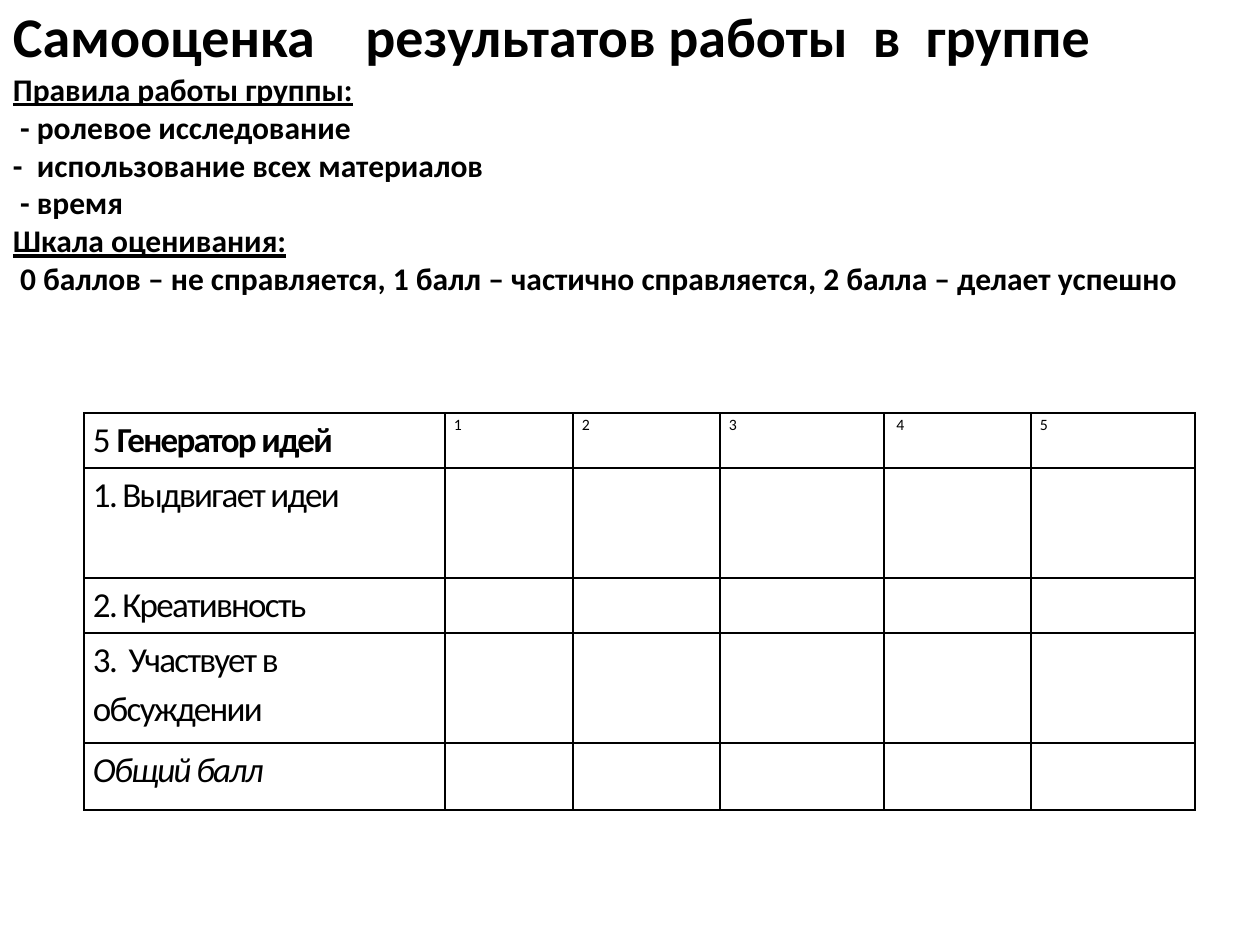
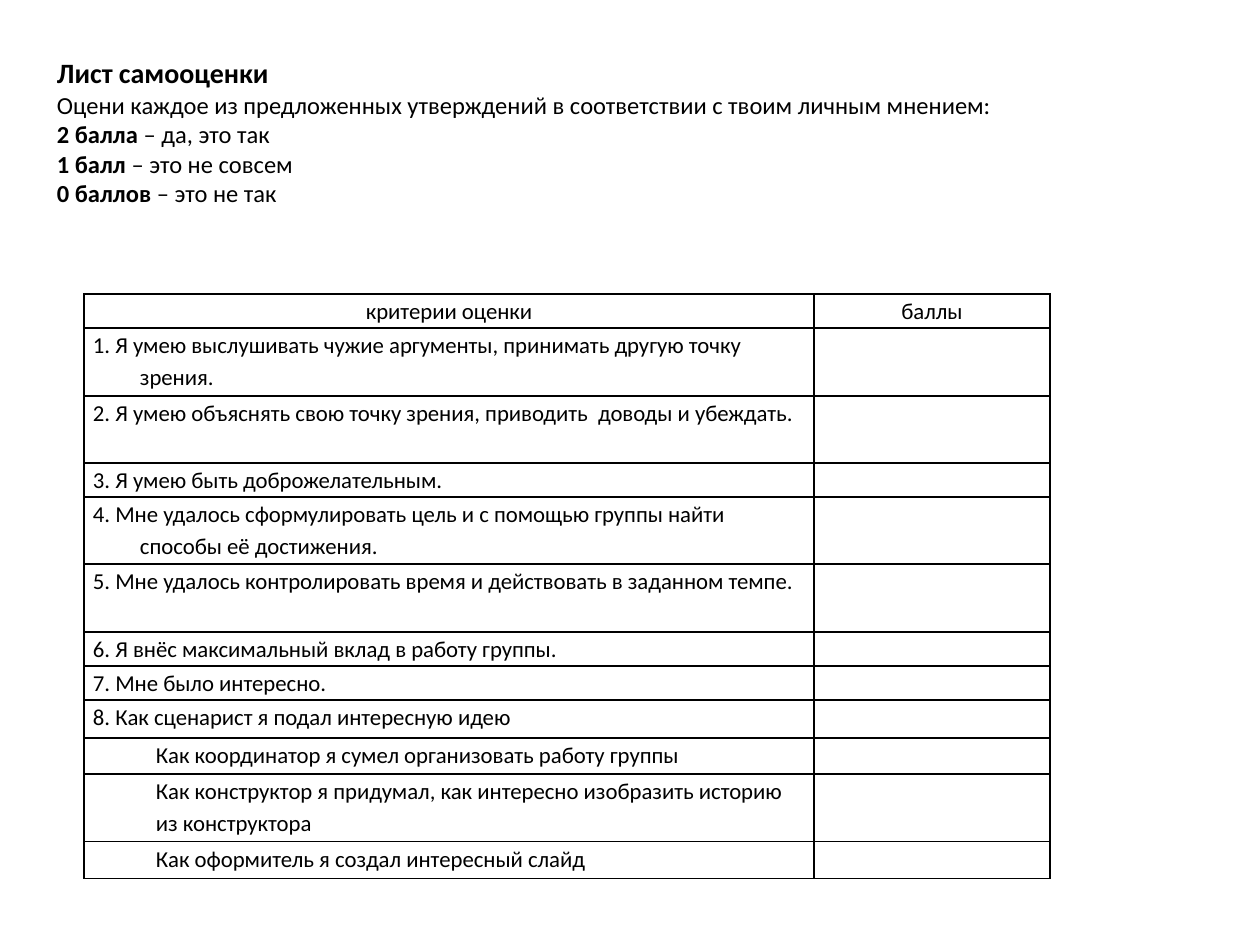
from dataclasses import dataclass

from lxml import etree
from pptx import Presentation
from pptx import util as u
from pptx.dml.color import RGBColor
from pptx.enum import text
from pptx.oxml.ns import qn

PX = 914400 // 126  # EMU in one px


@dataclass(frozen=True)
class Theme:
    font: str = "Calibri"
    ink: RGBColor = RGBColor(0, 0, 0)
    border: str = "000000"
    border_width: int = 12700
    line_spacing: float = 1.15
    heading: int = 32
    rules: int = 18
    sheet_heading: int = 16
    sheet_text: int = 14
    roles: int = 20
    numbers: int = 9
    criteria: int = 13


theme = Theme()


def write(paragraph, parts, size):
    """Fill a paragraph with (wording, style) parts; style holds b, i or u."""
    paragraph.font.name = theme.font
    paragraph.font.size = u.Pt(size)
    paragraph.font.color.rgb = theme.ink
    for wording, style in parts:
        run = paragraph.add_run()
        run.text = wording
        font = paragraph.font if len(parts) == 1 else run.font
        font.bold = "b" in style
        font.italic = "i" in style
        font.underline = "u" in style


def add_grid(slide, left, top, columns, rows, empty_size):
    """Add a plain ruled table with the given column widths and row heights."""
    frame = slide.shapes.add_table(len(rows), len(columns), left * PX, top * PX,
                                   sum(columns) * PX, sum(rows) * PX)
    table = frame.table
    table.first_row = table.horz_banding = False
    for column, width in zip(table.columns, columns):
        column.width = width * PX
    for row, height in zip(table.rows, rows):
        row.height = height * PX
    for cell in table.iter_cells():
        cell.margin_left = cell.margin_right = 9 * PX
        cell.margin_top = cell.margin_bottom = 0
        properties = cell._tc.get_or_add_tcPr()
        for side in ("a:lnL", "a:lnR", "a:lnT", "a:lnB"):
            line = etree.SubElement(properties, qn(side), w=str(theme.border_width))
            fill = etree.SubElement(line, qn("a:solidFill"))
            etree.SubElement(fill, qn("a:srgbClr"), val=theme.border)
        cell.fill.background()
        paragraph = cell.text_frame.paragraphs[0]
        paragraph.line_spacing = theme.line_spacing
        etree.SubElement(paragraph._p, qn("a:endParaRPr"), sz=str(empty_size * 100))
    return table


presentation = Presentation()
presentation.slide_width = 1260 * PX
presentation.slide_height = 945 * PX

# Headings and the lists under them
pages = [
    {
        "box": (0, 2, 1260), "title_height": 68, "body_height": 231,
        "title": "Самооценка    результатов работы  в  группе",
        "title_size": theme.heading, "body_size": theme.rules,
        "body": [
            [("Правила работы группы:", "bu")],
            [(" - ролевое исследование", "b")],
            [("-  использование всех материалов", "b")],
            [(" - время", "b")],
            [("Шкала оценивания:", "bu")],
            [(" 0 баллов – не справляется, 1 балл – частично справляется, "
              "2 балла – делает успешно", "b")],
        ],
    },
    {
        "box": (44, 56, 1216), "title_height": 34, "body_height": 120,
        "title": "Лист самооценки",
        "title_size": theme.sheet_heading, "body_size": theme.sheet_text,
        "body": [
            [("Оцени каждое из предложенных утверждений в соответствии "
              "с твоим личным мнением:", "")],
            [("2 балла", "b"), (" – да, это так", "")],
            [("1 балл", "b"), (" – это не совсем", "")],
            [("0 баллов", "b"), (" – это не так", "")],
        ],
    },
]

slides = []
for page in pages:
    slide = presentation.slides.add_slide(presentation.slide_layouts[1])
    slides.append(slide)
    left, top, width = page["box"]
    title, body = slide.placeholders
    blocks = [
        (title, top, page["title_height"], [[(page["title"], "b")]], page["title_size"]),
        (body, top + page["title_height"], page["body_height"], page["body"],
         page["body_size"]),
    ]
    for shape, block_top, height, lines, size in blocks:
        shape.left, shape.top = left * PX, block_top * PX
        shape.width, shape.height = width * PX, height * PX
        frame = shape.text_frame
        frame.word_wrap = True
        frame.auto_size = text.MSO_AUTO_SIZE.NONE
        frame.vertical_anchor = text.MSO_ANCHOR.TOP
        frame.margin_left = frame.margin_right = 13 * PX
        frame.margin_top = frame.margin_bottom = 0
        for number, parts in enumerate(lines):
            paragraph = frame.add_paragraph() if number else frame.paragraphs[0]
            paragraph.alignment = text.PP_ALIGN.LEFT
            paragraph.space_before = u.Pt(0)
            properties = paragraph._p.get_or_add_pPr()
            properties.set("marL", "0")
            properties.set("indent", "0")
            etree.SubElement(properties, qn("a:buNone"))
            write(paragraph, parts, size)

# Slide 1: role table
role_table = add_grid(slides[0], 84, 413, [361, 128, 147, 164, 147, 164],
                      [55, 110, 55, 110, 67], theme.roles)
role_rows = [
    [("5 ", ""), ("Генератор идей", "b")],
    [("1. Выдвигает идеи", "")],
    [("2. Креативность", "")],
    [("3.  Участвует в обсуждении", "")],
    [("Общий балл", "i")],
]
for row, parts in enumerate(role_rows):
    paragraph = role_table.cell(row, 0).text_frame.paragraphs[0]
    write(paragraph, parts, theme.roles)
    for run in paragraph.runs:
        run._r.get_or_add_rPr().set("spc", "-100")
for column, number in enumerate(["1", "2", "3", " 4", "5"], start=1):
    paragraph = role_table.cell(0, column).text_frame.paragraphs[0]
    write(paragraph, [(number, "")], theme.numbers)

# Slide 2: criteria table
criteria_table = add_grid(slides[1], 84, 294, [730, 236],
                          [34, 68, 67, 34, 67, 68, 34, 34, 38, 36, 68, 37],
                          theme.criteria)
for column, label in enumerate(["критерии оценки", "баллы"]):
    paragraph = criteria_table.cell(0, column).text_frame.paragraphs[0]
    paragraph.alignment = text.PP_ALIGN.CENTER
    write(paragraph, [(label, "")], theme.criteria)

statements = [
    "1. Я умею выслушивать чужие аргументы, принимать другую точку зрения.",
    "2. Я умею объяснять свою точку зрения, приводить  доводы и убеждать.",
    "3. Я умею быть доброжелательным.",
    "4. Мне удалось сформулировать цель и с помощью группы найти способы её достижения.",
    "5. Мне удалось контролировать время и действовать в заданном темпе.",
    "6. Я внёс максимальный вклад в работу группы.",
    "7. Мне было интересно.",
    "8. Как сценарист я подал интересную идею",
]
role_statements = [
    "Как координатор я сумел организовать работу группы",
    "Как конструктор я придумал, как интересно изобразить историю из конструктора",
    "Как оформитель я создал интересный слайд",
]
for row, statement in enumerate(statements + role_statements, start=1):
    paragraph = criteria_table.cell(row, 0).text_frame.paragraphs[0]
    margin, indent = (47, -47) if row <= len(statements) else (63, 0)
    properties = paragraph._p.get_or_add_pPr()
    properties.set("marL", str(margin * PX))
    properties.set("indent", str(indent * PX))
    write(paragraph, [(statement, "")], theme.criteria)

presentation.save("out.pptx")
